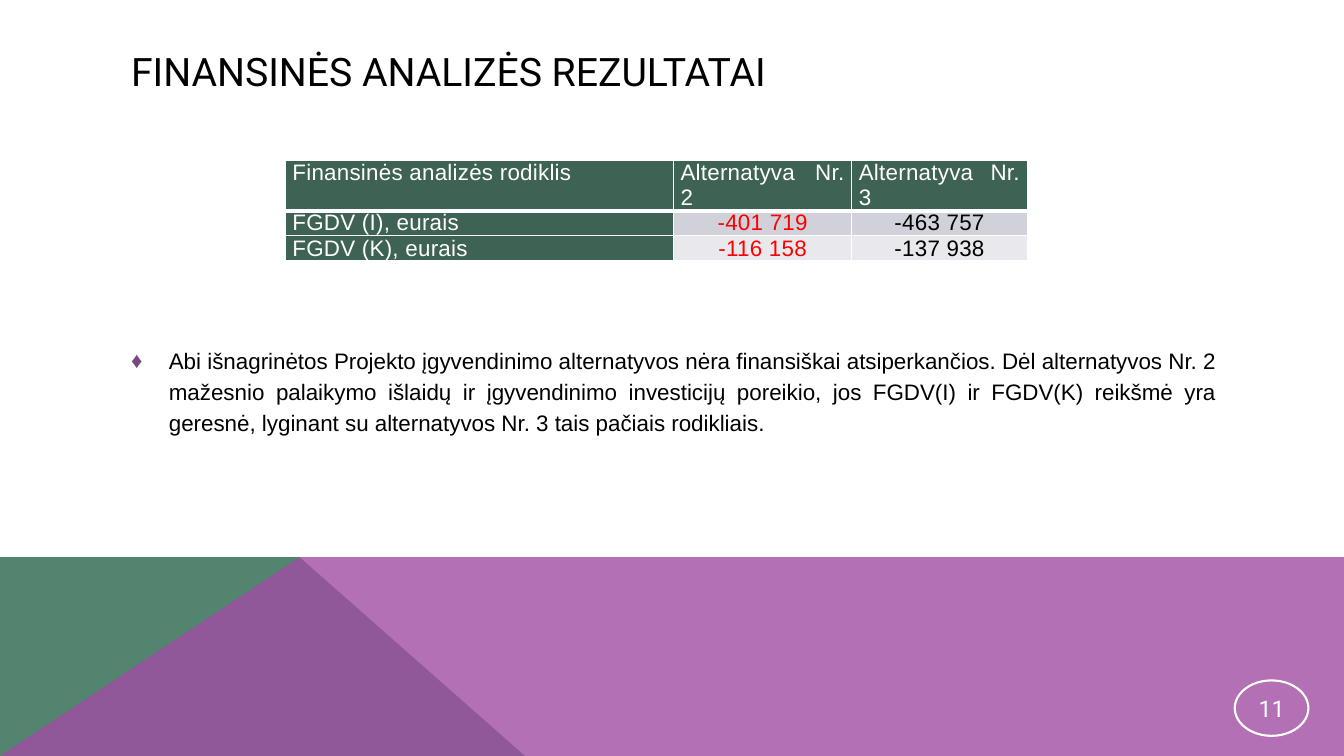
from lxml.etree import SubElement
from pptx import Presentation
from pptx.dml.color import RGBColor
from pptx.enum.shapes import MSO_SHAPE as Shape
from pptx.enum.text import MSO_ANCHOR as Anchor, MSO_AUTO_SIZE as AutoSize, PP_ALIGN as Align
from pptx.oxml import parse_xml
from pptx.oxml.ns import nsdecls, qn
from pptx.util import Pt

# Content
TITLE = "FINANSINĖS ANALIZĖS REZULTATAI"
RESULTS = [
    ("Finansinės analizės rodiklis", "Alternatyva Nr. 2", "Alternatyva Nr. 3"),
    ("FGDV (I), eurais", "-401 719", "-463 757"),
    ("FGDV (K), eurais", "-116 158", "-137 938"),
]
CONCLUSION = (
    "Abi išnagrinėtos Projekto įgyvendinimo alternatyvos nėra finansiškai atsiperkančios. "
    "Dėl alternatyvos Nr. 2 mažesnio palaikymo išlaidų ir įgyvendinimo investicijų poreikio, "
    "jos FGDV(I) ir FGDV(K) reikšmė yra geresnė, lyginant su alternatyvos Nr. 3 tais pačiais "
    "rodikliais."
)
PAGE = "11"

# Layout, in points
WIDTH, HEIGHT = 960, 540
MARGIN, TEXT_WIDTH = 86.4, 789.8
BAND_TOP, PEAK = 397.5, 214.2
COLUMNS = (277.2, 127.4, 125.3)
ROWS = (36, 18, 18)
GREEN_BAND = [(0, HEIGHT), (0, BAND_TOP), (PEAK, BAND_TOP), (375, HEIGHT)]
PURPLE_BAND = [(0, HEIGHT), (PEAK, BAND_TOP), (WIDTH, BAND_TOP), (WIDTH, HEIGHT)]
ROW_FILLS = ("3E6354", "D1D1DA", "E9E9ED")


def color(code):
    return RGBColor.from_string(code)


def style(paragraph, size, font, code, align):
    paragraph.alignment = align
    paragraph.font.size = Pt(size)
    paragraph.font.name = font
    paragraph.font.color.rgb = color(code)


def place(shape, left, top, width, height):
    shape.left, shape.top = Pt(left), Pt(top)
    shape.width, shape.height = Pt(width), Pt(height)


def add_band(corners, code):
    builder = slide.shapes.build_freeform(*corners[0], scale=Pt(1))
    builder.add_line_segments(corners[1:], close=True)
    band = builder.convert_to_shape()
    band.shadow.inherit = False
    band.fill.solid()
    band.fill.fore_color.rgb = color(code)
    band.line.fill.background()
    return band


def add_borders(cell, widths):
    properties = cell._tc.get_or_add_tcPr()
    for position, (side, width) in enumerate(widths.items()):
        properties.insert(position, parse_xml(
            f'<a:ln{side} {nsdecls("a")} w="{Pt(width)}"><a:solidFill>'
            f'<a:srgbClr val="FFFFFF"/></a:solidFill></a:ln{side}>'))


deck = Presentation()
deck.slide_width, deck.slide_height = Pt(WIDTH), Pt(HEIGHT)
slide = deck.slides.add_slide(deck.slide_layouts[1])

# Bottom bands
add_band(GREEN_BAND, "528470")
purple = add_band(PURPLE_BAND, "A04DA3")
purple_color = next(purple._element.spPr.iter(qn("a:srgbClr")))
SubElement(purple_color, qn("a:alpha"), val="80000")

# Title
title = slide.shapes.title
place(title, MARGIN, 28.8, TEXT_WIDTH, 43.2)
title.text_frame.text = TITLE
title.text_frame.auto_size = AutoSize.NONE
title.text_frame.vertical_anchor = Anchor.MIDDLE
style(title.text_frame.paragraphs[0], 28, "Roboto", "000000", Align.LEFT)

# Conclusion
conclusion = slide.placeholders[1]
place(conclusion, MARGIN, 241.5, TEXT_WIDTH, 130)
conclusion.text_frame.text = CONCLUSION
conclusion.text_frame.auto_size = AutoSize.NONE
point = conclusion.text_frame.paragraphs[0]
style(point, 16, "Arial", "000000", Align.JUSTIFY)
point.line_spacing = 1.15
point.space_before = Pt(0)
bullet = point._p.get_or_add_pPr()
bullet.set("marL", str(Pt(27)))
bullet.set("indent", str(Pt(-27)))
bullet_color = SubElement(bullet, qn("a:buClr"))
SubElement(bullet_color, qn("a:srgbClr"), val="7A4880")
SubElement(bullet, qn("a:buFont"), typeface="Arial")
SubElement(bullet, qn("a:buChar"), char="♦")
# Text properties come last in the paragraph properties
bullet.append(bullet.find(qn("a:defRPr")))

# Results table
results = slide.shapes.add_table(
    len(ROWS), len(COLUMNS), Pt(203.9), Pt(114.5), Pt(sum(COLUMNS)), Pt(sum(ROWS))).table
for column, width in zip(results.columns, COLUMNS):
    column.width = Pt(width)
for r, (row, height) in enumerate(zip(results.rows, ROWS)):
    row.height = Pt(height)
    for c, cell in enumerate(row.cells):
        is_label = r == 0 or c == 0
        cell.text = RESULTS[r][c]
        cell.margin_left = cell.margin_right = Pt(5)
        cell.margin_top = cell.margin_bottom = Pt(0)
        cell.fill.solid()
        cell.fill.fore_color.rgb = color(ROW_FILLS[0] if is_label else ROW_FILLS[r])
        ink = "FFFFFF" if is_label else "FF0000" if c == 1 else "000000"
        figure = cell.text_frame.paragraphs[0]
        style(figure, 16, "Arial", ink, Align.JUSTIFY if is_label else Align.CENTER)
        figure.font.bold = False
        figure.runs[0]._r.get_or_add_rPr().set("spc", "20")
        add_borders(cell, {"L": 1, "R": 1, "T": 3 if r == 1 else 1, "B": 3 if r == 0 else 1})

# Page number
page = slide.shapes.add_shape(Shape.OVAL, Pt(882), Pt(486), Pt(52.6), Pt(39.6))
page.shadow.inherit = False
page.fill.background()
page.line.color.rgb = color("FFFFFF")
page.line.width = Pt(1.5)
number = page.text_frame
number.text = PAGE
number.vertical_anchor = Anchor.MIDDLE
number.margin_left = number.margin_right = number.margin_top = number.margin_bottom = Pt(0.7)
style(number.paragraphs[0], 16.5, "Roboto", "FFFFFF", Align.CENTER)

deck.save("out.pptx")
